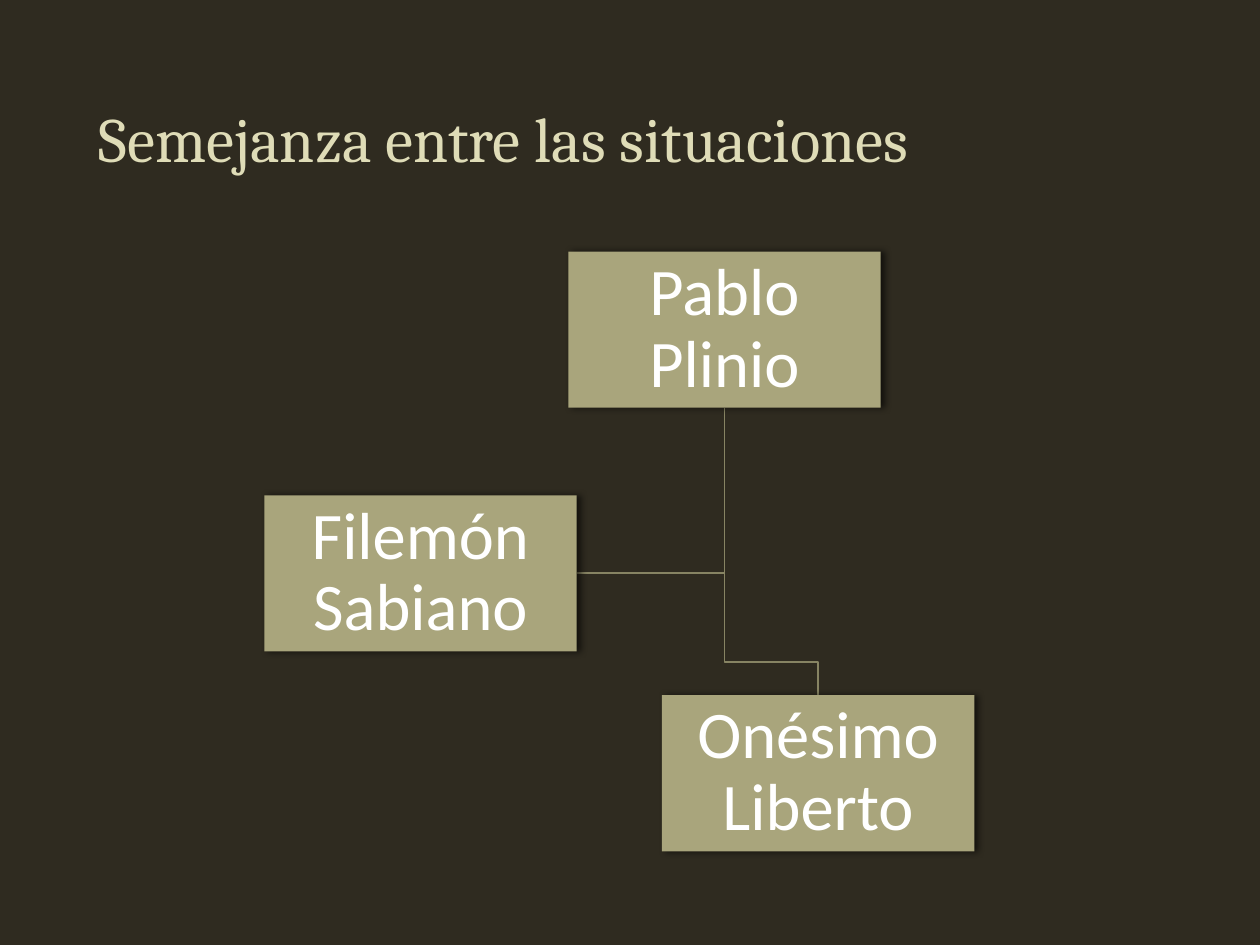
import pptx
import pptx.util
import pptx.dml.color
import pptx.enum.shapes
import pptx.enum.text
import pptx.oxml
import pptx.oxml.ns
from dataclasses import dataclass

Pt = pptx.util.Pt


@dataclass(frozen=True)
class Theme:
    background: str = "2F2B20"
    title: str = "DFDCB7"
    box: str = "A9A57C"
    box_text: str = "FFFFFF"
    line: str = "878463"
    title_font: str = "Cambria"
    box_font: str = "Calibri"
    title_size: float = 36
    box_size: float = 38
    line_spacing: float = 0.9


SHADOW = (
    f'<a:outerShdw {pptx.oxml.ns.nsdecls("a")} blurRad="{Pt(4)}" dist="{Pt(2)}" dir="0">'
    '<a:srgbClr val="000000"><a:alpha val="60000"/></a:srgbClr></a:outerShdw>'
)


def rgb(value):
    return pptx.dml.color.RGBColor.from_string(value)


class SlideBuilder:
    def __init__(self, slide, theme):
        self.slide = slide
        self.theme = theme
        slide.background.fill.solid()
        slide.background.fill.fore_color.rgb = rgb(theme.background)

    def set_text(self, shape, text, font, size, color, align):
        frame = shape.text_frame
        frame.word_wrap = True
        frame.vertical_anchor = pptx.enum.text.MSO_ANCHOR.MIDDLE
        paragraph = frame.paragraphs[0]
        paragraph.text = text
        paragraph.alignment = align
        paragraph.line_spacing = self.theme.line_spacing
        paragraph.font.name = font
        paragraph.font.size = Pt(size)
        paragraph.font.color.rgb = rgb(color)

    def title(self, text, left, top, width, height):
        box = self.slide.shapes.add_textbox(Pt(left), Pt(top), Pt(width), Pt(height))
        self.set_text(box, text, self.theme.title_font, self.theme.title_size,
                      self.theme.title, pptx.enum.text.PP_ALIGN.LEFT)

    def branch(self, points):
        start, *rest = [(Pt(x), Pt(y)) for x, y in points]
        builder = self.slide.shapes.build_freeform(*start)
        builder.add_line_segments(rest, close=False)
        branch = builder.convert_to_shape()
        branch.shadow.inherit = False
        branch.fill.background()
        branch.line.color.rgb = rgb(self.theme.line)
        branch.line.width = Pt(1)

    def box(self, text, left, top, width, height):
        box = self.slide.shapes.add_shape(
            pptx.enum.shapes.MSO_SHAPE.RECTANGLE, Pt(left), Pt(top), Pt(width), Pt(height))
        box.fill.solid()
        box.fill.fore_color.rgb = rgb(self.theme.box)
        box.line.fill.background()
        box.shadow.inherit = False
        effects = box._element.spPr.find(pptx.oxml.ns.qn("a:effectLst"))
        effects.append(pptx.oxml.parse_xml(SHADOW))
        frame = box.text_frame
        frame.margin_left = frame.margin_right = Pt(2)
        frame.margin_top = frame.margin_bottom = Pt(2)
        self.set_text(box, text, self.theme.box_font, self.theme.box_size,
                      self.theme.box_text, pptx.enum.text.PP_ALIGN.CENTER)


def main():
    presentation = pptx.Presentation()
    presentation.slide_width = Pt(720)
    presentation.slide_height = Pt(540)
    slide = presentation.slides.add_slide(presentation.slide_layouts[6])
    builder = SlideBuilder(slide, Theme())

    # Title
    builder.title("Semejanza entre las situaciones", 49.5, 28.8, 621, 104.4)

    # Chart layout: left and top of each box
    width, height = 178.5, 89.25
    sender = (324.75, 143.75)
    freedman = (378.25, 397.25)
    recipient = (151, 283)

    # Branches, behind the boxes
    trunk_x, trunk_top = sender[0] + width / 2, sender[1] + height
    recipient_y = recipient[1] + height / 2
    freedman_x = freedman[0] + width / 2
    elbow_y = freedman[1] - 19
    trunk = (trunk_x, trunk_top)
    builder.branch([trunk, (trunk_x, recipient_y), (recipient[0] + width, recipient_y)])
    builder.branch([trunk, (trunk_x, elbow_y), (freedman_x, elbow_y),
                    (freedman_x, freedman[1])])

    # Boxes
    for text, corner in (("Pablo Plinio", sender), ("Onésimo Liberto", freedman),
                         ("Filemón Sabiano", recipient)):
        builder.box(text, *corner, width, height)

    presentation.save("out.pptx")


if __name__ == "__main__":
    main()
